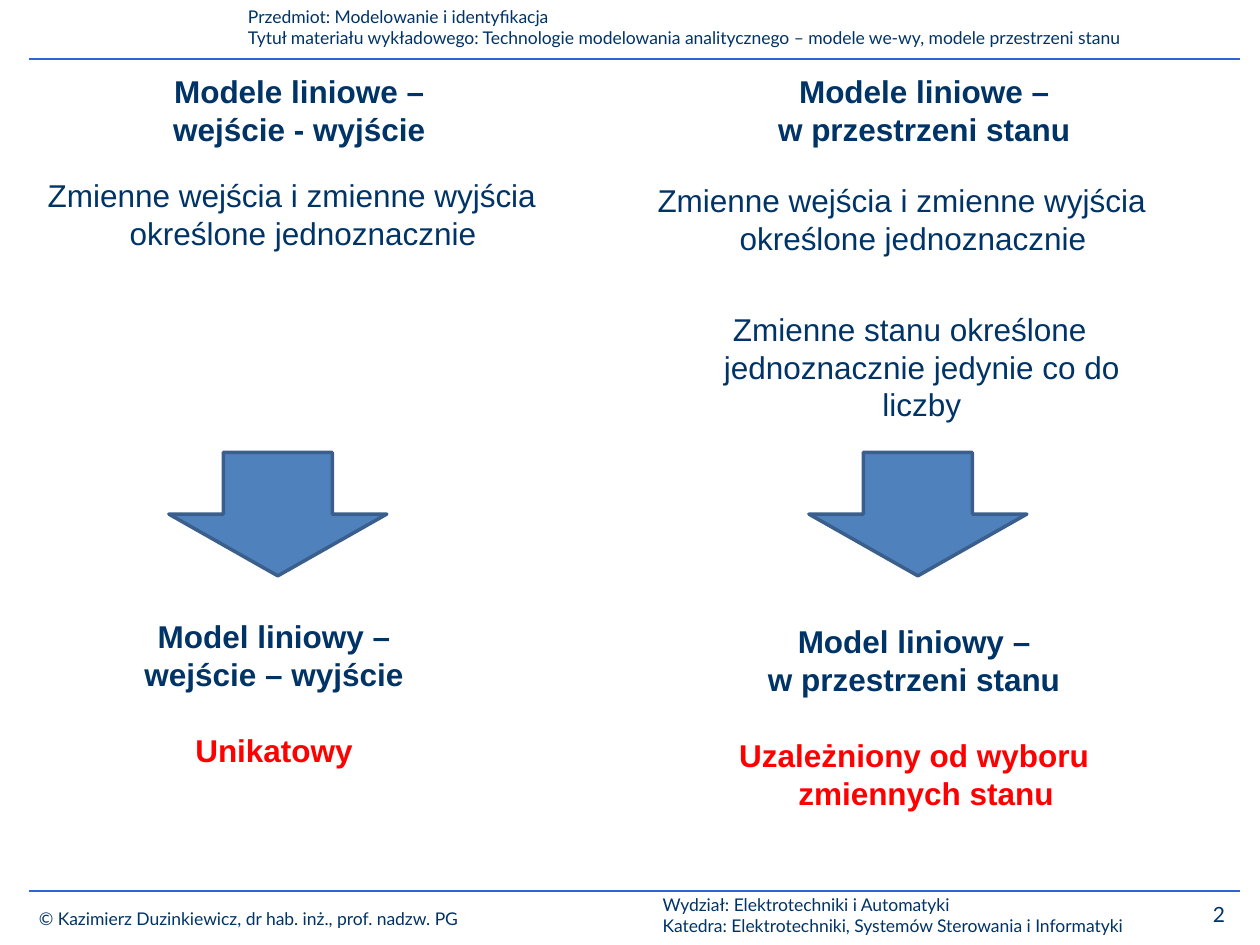
"""Build the slide comparing linear input-output and state-space models."""
from lxml import etree
from pptx import Presentation
from pptx import util as u
from pptx.dml.color import RGBColor
from pptx.enum import shapes, text
from pptx.oxml import ns

PX = 9144
NAVY, RED, RULE_BLUE = "003366", "FF0000", "3366CC"
LEFT, CENTER = text.PP_ALIGN.LEFT, text.PP_ALIGN.CENTER


def color(value):
    return RGBColor.from_string(value)


def add_text(box, lines, font, size, bold=False, align=LEFT, hanging=0):
    left, top, width, height = [value * PX for value in box]
    frame = slide.shapes.add_textbox(left, top, width, height).text_frame
    frame.word_wrap = True
    frame.text = "\n".join(lines)
    for paragraph in frame.paragraphs:
        paragraph.alignment = align
        if hanging:
            properties = paragraph._p.get_or_add_pPr()
            properties.set("marL", str(hanging * PX))
            properties.set("indent", str(-hanging * PX))
        run_font = paragraph.runs[0].font
        run_font.name = font
        run_font.size = u.Pt(size)
        run_font.bold = bold
        run_font.color.rgb = color(NAVY)
    return frame.paragraphs


presentation = Presentation()
presentation.slide_width = 1000 * PX
presentation.slide_height = 750 * PX
slide = presentation.slides.add_slide(presentation.slide_layouts[6])

page_texts = [
    ((187, 0, 813, 44), [
        "Przedmiot: Modelowanie i identyfikacja",
        "Tytuł materiału wykładowego: Technologie modelowania analitycznego "
        "– modele we-wy, modele przestrzeni stanu"]),
    ((21, 716, 402, 27), ["© Kazimierz Duzinkiewicz, dr hab. inż., prof. nadzw. PG"]),
    ((516, 705, 445, 44), [
        "Wydział: Elektrotechniki i Automatyki",
        "Katedra: Elektrotechniki, Systemów Sterowania i Informatyki"]),
]
for box, lines in page_texts:
    add_text(box, lines, "Lato", 10)
add_text((935, 711, 65, 30), ["2"], "Lato", 12, align=CENTER)

for rule_y in (47, 707):
    rule = slide.shapes.add_connector(
        shapes.MSO_CONNECTOR.STRAIGHT, 23 * PX, rule_y * PX, 984 * PX, rule_y * PX)
    rule.line.color.rgb = color(RULE_BLUE)
    rule.line.width = u.Pt(1.25)
    etree.SubElement(rule._element.spPr, ns.qn("a:effectLst"))

columns = [
    ("wejście - wyjście", "wejście – wyjście", "Unikatowy",
     (63, 52, 349, 71), (28, 135, 425, 71), 134, (43, 485, 349, 131)),
    ("w przestrzeni stanu", "w przestrzeni stanu", "Uzależniony od wyboru zmiennych stanu",
     (559, 52, 349, 71), (512, 139, 425, 71), 642, (551, 489, 349, 162)),
]
for heading, model, verdict, heading_box, variables_box, arrow_x, model_box in columns:
    add_text(heading_box, ["Modele liniowe –", heading], "Arial", 18, True, CENTER, 19)

    variables = add_text(
        variables_box, ["Zmienne wejścia i zmienne wyjścia", "określone jednoznacznie"],
        "Arial", 18, align=CENTER, hanging=19)
    variables[0].alignment = LEFT

    arrow = slide.shapes.add_shape(
        shapes.MSO_SHAPE.DOWN_ARROW, arrow_x * PX, 359 * PX, 173 * PX, 98 * PX)
    arrow.shadow.inherit = False
    arrow.fill.solid()
    arrow.fill.fore_color.rgb = color("4F81BD")
    arrow.line.color.rgb = color("3A5F8C")
    arrow.line.width = u.Pt(2)

    conclusion = add_text(
        model_box, ["Model liniowy –", model, verdict], "Arial", 18, True, CENTER, 19)
    conclusion[-1].space_before = u.Pt(21.6)
    conclusion[-1].runs[0].font.color.rgb = color(RED)

add_text((543, 241, 358, 101),
         ["Zmienne stanu określone jednoznacznie jedynie co do liczby"],
         "Arial", 18, align=CENTER, hanging=19)

presentation.save("out.pptx")
